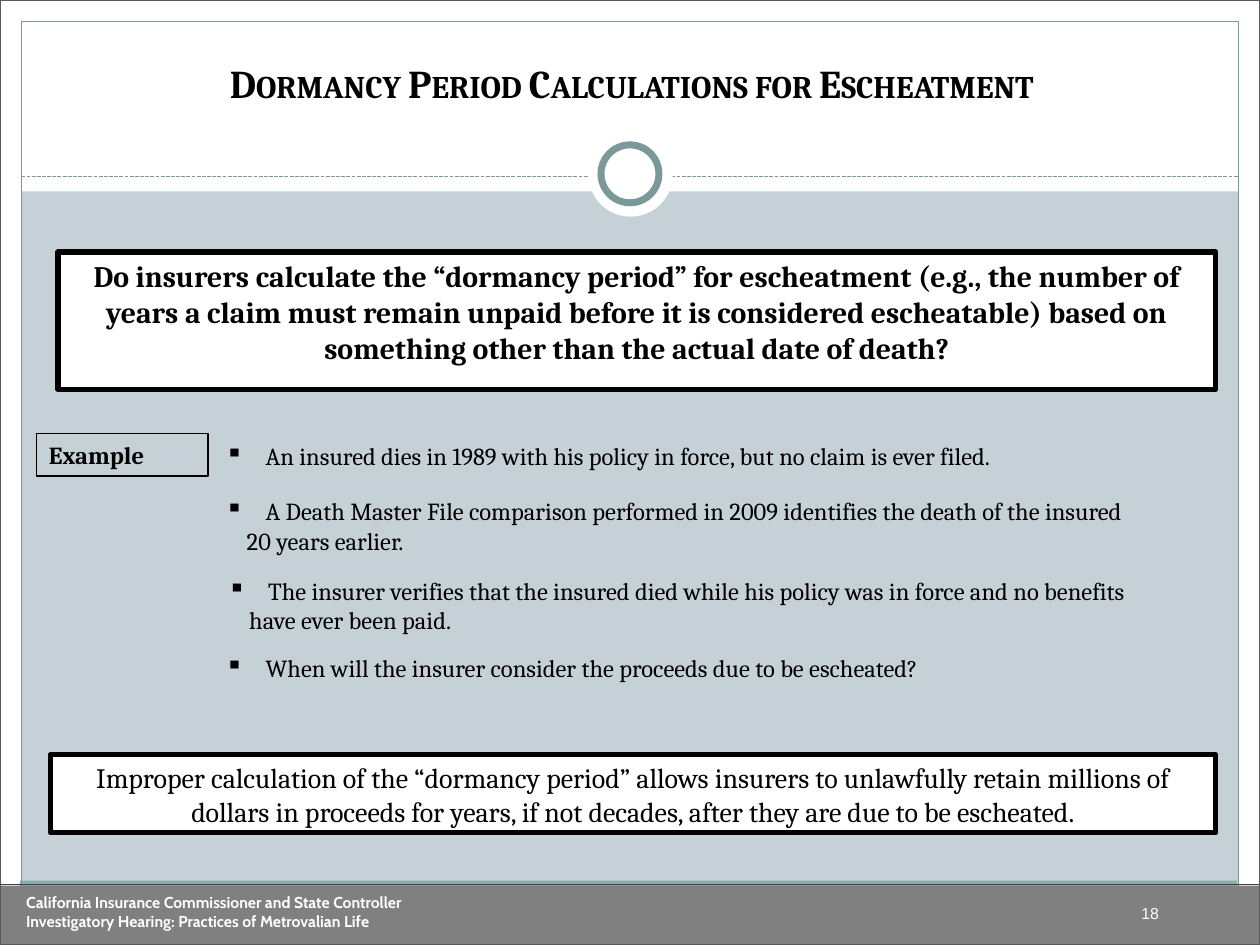
from lxml.etree import SubElement
from pptx import Presentation
from pptx.dml.color import RGBColor
from pptx.enum.dml import MSO_LINE
from pptx.enum.shapes import MSO_CONNECTOR, MSO_SHAPE
from pptx.enum.text import MSO_ANCHOR, PP_ALIGN
from pptx.oxml.ns import qn
from pptx.util import Inches, Pt

COLORS = {
    "background": "C5D1D7",
    "white": "FFFFFF",
    "black": "000000",
    "band": "8CADAE",
    "frame": "7C999A",
    "footer": "808080",
    "footer_line": "404040",
    "edge": "595959",
}

BULLETS = [  # left, top, height, lines
    (1.69, 3.45, 0.34,
     ["An insured dies in 1989 with his policy in force, but no claim is ever filed."]),
    (1.69, 3.89, 0.57,
     ["A Death Master File comparison performed in 2009 identifies the death of the insured",
      "20 years earlier."]),
    (1.71, 4.52, 0.57,
     ["The insurer verifies that the insured died while his policy was in force and no benefits",
      "have ever been paid."]),
    (1.69, 5.13, 0.34,
     ["When will the insurer consider the proceeds due to be escheated?"]),
]


def rgb(name):
    return RGBColor.from_string(COLORS[name])


def add_box(slide, at, fill=None, line=None, width=0.75, shape=MSO_SHAPE.RECTANGLE):
    sp = slide.shapes.add_shape(shape, *map(Inches, at))
    sp.shadow.inherit = False
    if fill:
        sp.fill.solid()
        sp.fill.fore_color.rgb = rgb(fill)
    else:
        sp.fill.background()
    if line:
        sp.line.color.rgb = rgb(line)
        sp.line.width = Pt(width)
    else:
        sp.line.fill.background()
    return sp


def add_rule(slide, left, right, y, color, dash=None):
    line = slide.shapes.add_connector(
        MSO_CONNECTOR.STRAIGHT, Inches(left), Inches(y), Inches(right), Inches(y))
    line.line.color.rgb = rgb(color)
    line.line.width = Pt(0.75)
    if dash:
        line.line.dash_style = dash
    SubElement(line._element.spPr, qn("a:effectLst"))


def set_text(sp, lines, size, font="Cambria", color="black", bold=False,
             align=PP_ALIGN.LEFT, anchor=MSO_ANCHOR.TOP):
    tf = sp.text_frame
    tf.word_wrap = True
    tf.vertical_anchor = anchor
    tf.text = "\n".join(lines)
    for p in tf.paragraphs:
        p.alignment = align
        p.font.size = Pt(size)
        p.font.name = font
        p.font.bold = bold
        p.font.color.rgb = rgb(color)
    return tf


def add_text(slide, at, lines, size, **style):
    return set_text(slide.shapes.add_textbox(*map(Inches, at)), lines, size, **style)


def add_bullet(slide, left, top, height, lines):
    tf = add_text(slide, (left, top, 7.9, height), lines, 14)
    first, *rest = [p._p.get_or_add_pPr() for p in tf.paragraphs]
    first.set("marL", str(Inches(0.32)))
    first.set("indent", str(-Inches(0.32)))
    SubElement(first, qn("a:buChar")).set("char", "▪")
    # buChar must come before the paragraph's default run properties
    first.insert(0, first[-1])
    for pPr in rest:
        pPr.set("marL", str(Inches(0.17)))


def add_frame(slide):
    for at in [(0, 7.33, 10, 0.17), (0, 0, 10, 1.52),
               (0, 0, 0.17, 7.5), (9.83, 0, 0.17, 7.5)]:
        add_box(slide, at, "white")
    add_box(slide, (0.16, 6.99, 9.66, 0.34), "band")
    add_box(slide, (0.17, 0.17, 9.66, 7.16), line="frame")
    add_rule(slide, 0.17, 9.83, 1.4, "frame", MSO_LINE.SQUARE_DOT)
    # Ring on the title divider
    add_box(slide, (4.67, 1.05, 0.67, 0.67), "white", shape=MSO_SHAPE.OVAL)
    add_box(slide, (4.77, 1.15, 0.46, 0.46), "white", "frame", 4, MSO_SHAPE.OVAL)


def add_footer(slide):
    add_box(slide, (0, 7.03, 10, 0.47), "footer")
    add_text(slide, (8.96, 7.12, 0.62, 0.25), ["18"], 9, font="Arial", color="white")
    add_rule(slide, 0, 10, 7.02, "footer_line")
    add_box(slide, (0, 0, 10, 7.5), line="edge")
    add_text(slide, (0.11, 7.04, 5.94, 0.4),
             ["California Insurance Commissioner and State Controller",
              "Investigatory Hearing: Practices of Metrovalian Life"],
             9, font="Cabin", color="white", bold=True)


def main():
    prs = Presentation()
    prs.slide_width, prs.slide_height = Inches(10), Inches(7.5)
    slide = prs.slides.add_slide(prs.slide_layouts[6])
    slide.background.fill.solid()
    slide.background.fill.fore_color.rgb = rgb("background")

    add_frame(slide)
    add_footer(slide)

    # Title in small capitals
    tf = add_text(slide, (0.46, 0.07, 9.11, 0.82),
                  ["Dormancy Period Calculations for Escheatment"], 22.5,
                  bold=True, align=PP_ALIGN.CENTER, anchor=MSO_ANCHOR.BOTTOM)
    tf.paragraphs[0].runs[0].font._element.set("cap", "small")

    # Question
    question = add_box(slide, (0.46, 2, 9.19, 1.09), "white", "black", 3)
    set_text(question,
             ["Do insurers calculate the “dormancy period” for escheatment (e.g., the number "
              "of years a claim must remain unpaid before it is considered escheatable) based "
              "on something other than the actual date of death?"],
             17, bold=True, align=PP_ALIGN.CENTER)

    # Example
    example = add_box(slide, (0.29, 3.44, 1.36, 0.34), line="black", width=1)
    set_text(example, ["Example"], 14, bold=True)
    for bullet in BULLETS:
        add_bullet(slide, *bullet)

    # Conclusion
    conclusion = add_box(slide, (0.4, 5.99, 9.25, 0.62), "white", "black", 3)
    set_text(conclusion,
             ["Improper calculation of the “dormancy period” allows insurers to unlawfully "
              "retain millions of dollars in proceeds for years, if not decades, after they "
              "are due to be escheated."],
             16, align=PP_ALIGN.CENTER)

    prs.save("out.pptx")


if __name__ == "__main__":
    main()
